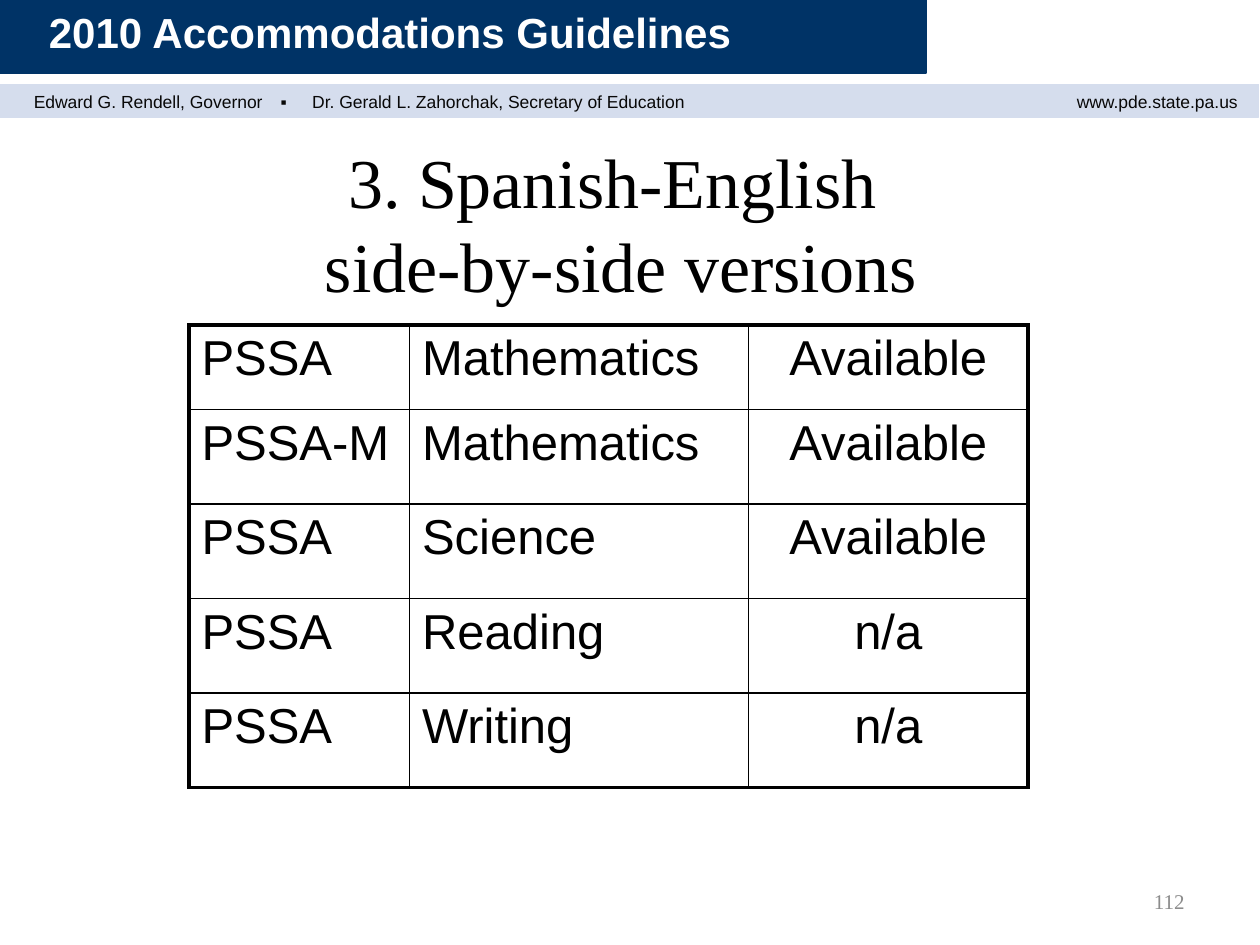
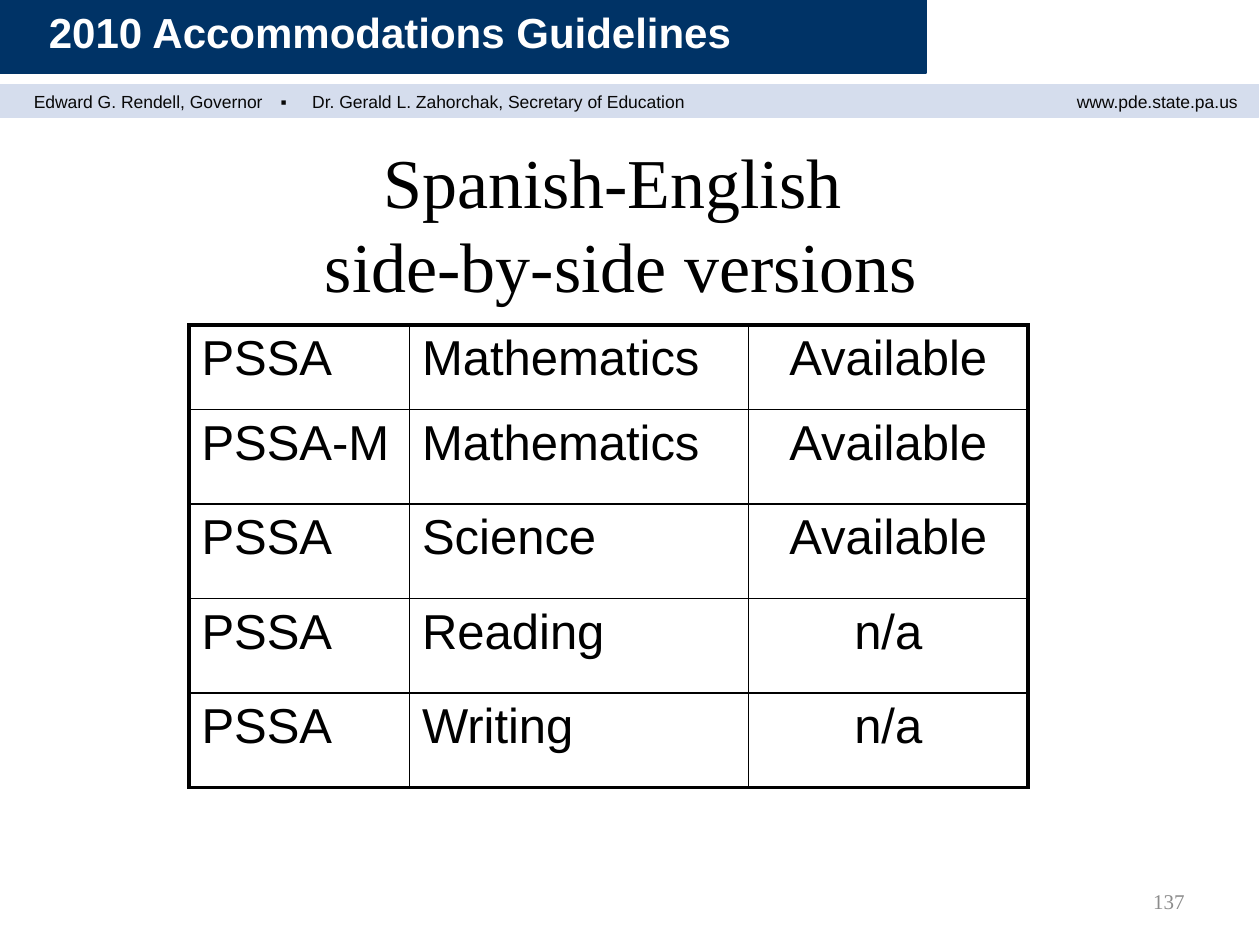
"""Build two slides on Spanish-English side-by-side test versions."""
from lxml import etree
from pptx import Presentation
from pptx.dml.color import RGBColor
from pptx.enum.shapes import MSO_SHAPE
from pptx.enum.text import MSO_ANCHOR, PP_ALIGN
from pptx.oxml.ns import qn
from pptx.util import Inches, Pt

RECTANGLE = MSO_SHAPE.RECTANGLE
TOP, MIDDLE = MSO_ANCHOR.TOP, MSO_ANCHOR.MIDDLE
LEFT, CENTER, RIGHT = PP_ALIGN.LEFT, PP_ALIGN.CENTER, PP_ALIGN.RIGHT

COLORS = {
    "navy": "003366",
    "pale": "D5DDED",
    "ink": "080808",
    "black": "000000",
    "white": "FFFFFF",
    "gray": "8C8C8C",
}
SANS, SERIF = "Arial", "Times New Roman"
THICK, THIN = 2.25, 1

COLUMN_WIDTHS = [1.75, 2.69, 2.22]
ROW_HEIGHTS = [0.67] + [0.75] * 4
VERSIONS = [
    ("PSSA", "Mathematics", "Available"),
    ("PSSA-M", "Mathematics", "Available"),
    ("PSSA", "Science", "Available"),
    ("PSSA", "Reading", "n/a"),
    ("PSSA", "Writing", "n/a"),
]
PAGES = [
    ("3. Spanish-English \vside-by-side versions", "112"),
    ("Spanish-English \vside-by-side versions", "137"),
]


def rgb(name):
    """Return the named colour."""
    return RGBColor.from_string(COLORS[name])


def write(tf, text, size, font=SANS, color="black", bold=False, align=LEFT,
          line_spacing=None, tabs=()):
    """Put formatted text into the first paragraph of a text frame."""
    p = tf.paragraphs[0]
    p.text = text
    p.alignment = align
    p.line_spacing = line_spacing
    if tabs:
        tab_list = etree.SubElement(p._p.get_or_add_pPr(), qn("a:tabLst"))
        for position in tabs:
            etree.SubElement(tab_list, qn("a:tab"), pos=str(Inches(position)), algn="l")
    for r in p.runs:
        r.font.name = font
        r.font.size = Pt(size)
        r.font.bold = bold
        r.font.color.rgb = rgb(color)


def add_text(s, box, text, size, anchor=TOP, wrap=True, **style):
    """Add a text box at left, top, width, height in inches."""
    tf = s.shapes.add_textbox(*map(Inches, box)).text_frame
    tf.word_wrap = wrap
    tf.vertical_anchor = anchor
    write(tf, text, size, **style)


def add_band(s, box, color):
    """Add a plain coloured band."""
    sp = s.shapes.add_shape(RECTANGLE, *map(Inches, box))
    sp.shadow.inherit = False
    sp.fill.solid()
    sp.fill.fore_color.rgb = rgb(color)
    sp.line.color.rgb = rgb(color)
    sp.line.width = Pt(0.75)


def add_header(s):
    """Draw the bands and texts at the top of every slide."""
    add_band(s, (0, 0, 7.35, 0.58), "navy")
    add_band(s, (0, 0.67, 9.99, 0.26), "pale")
    officials = ("Edward G. Rendell, Governor\t▪\t"
                 "Dr. Gerald L. Zahorchak, Secretary of Education")
    add_text(s, (0.17, 0.67, 6.33, 0.27), officials, 10, color="ink", tabs=(1.96, 2.21))
    add_text(s, (8.17, 0.67, 1.75, 0.27), "www.pde.state.pa.us", 10, color="ink", align=RIGHT)
    add_text(s, (0.29, 0, 5.63, 0.5), "2010 Accommodations Guidelines", 24,
             color="white", bold=True, wrap=False)


def set_borders(cell, widths):
    """Give a cell black borders, with widths keyed by side."""
    tc_pr = cell._tc.get_or_add_tcPr()
    for side, width in widths.items():
        line = etree.SubElement(tc_pr, qn(f"a:ln{side}"), w=str(Pt(width)))
        fill = etree.SubElement(line, qn("a:solidFill"))
        etree.SubElement(fill, qn("a:srgbClr"), val=COLORS["black"])


def add_versions_table(s):
    """Add the table of test versions, with a thick outer frame."""
    last_row, last_col = len(ROW_HEIGHTS) - 1, len(COLUMN_WIDTHS) - 1
    table = s.shapes.add_table(
        last_row + 1, last_col + 1, Inches(1.5), Inches(2.58),
        Inches(sum(COLUMN_WIDTHS)), Inches(sum(ROW_HEIGHTS))).table
    table.first_row = table.horz_banding = False
    for column, width in zip(table.columns, COLUMN_WIDTHS):
        column.width = Inches(width)
    for i, (height, values) in enumerate(zip(ROW_HEIGHTS, VERSIONS)):
        table.rows[i].height = Inches(height)
        for j, value in enumerate(values):
            cell = table.cell(i, j)
            outer = {"L": j == 0, "R": j == last_col, "T": i == 0, "B": i == last_row}
            set_borders(cell, {side: THICK if edge else THIN for side, edge in outer.items()})
            cell.fill.background()
            write(cell.text_frame, value, 28, align=CENTER if j == last_col else LEFT)


def main():
    """Build and save the presentation."""
    prs = Presentation()
    prs.slide_width, prs.slide_height = Inches(10), Inches(7.5)
    for title, number in PAGES:
        s = prs.slides.add_slide(prs.slide_layouts[6])
        add_header(s)
        add_text(s, (0.68, 1.14, 8.5, 1.25), title, 40, anchor=MIDDLE,
                 font=SERIF, align=CENTER, line_spacing=Pt(48))
        add_text(s, (7.17, 6.95, 2.33, 0.4), number, 12, anchor=MIDDLE,
                 font=SERIF, color="gray", align=RIGHT)
        add_versions_table(s)
    prs.save("out.pptx")


if __name__ == "__main__":
    main()
